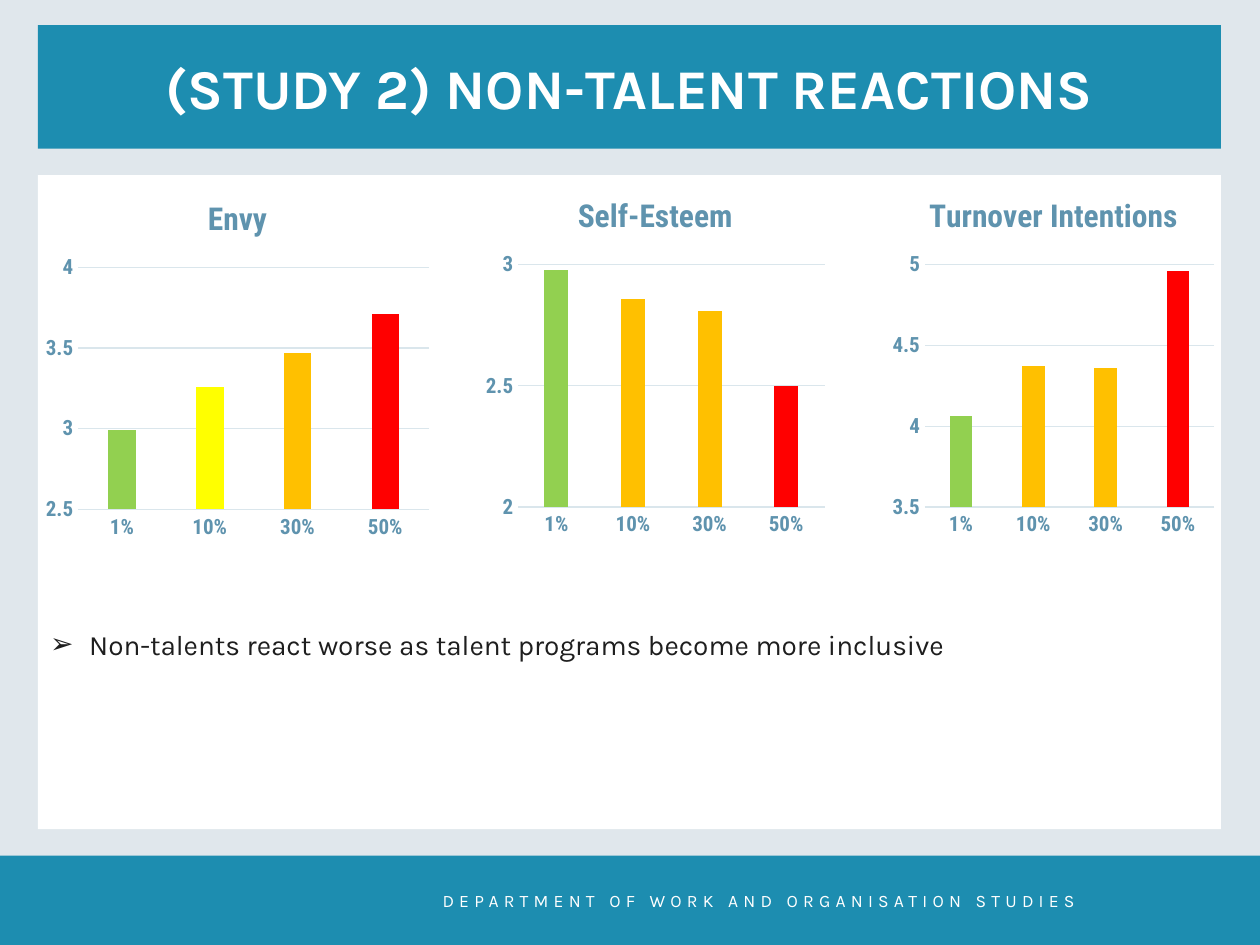
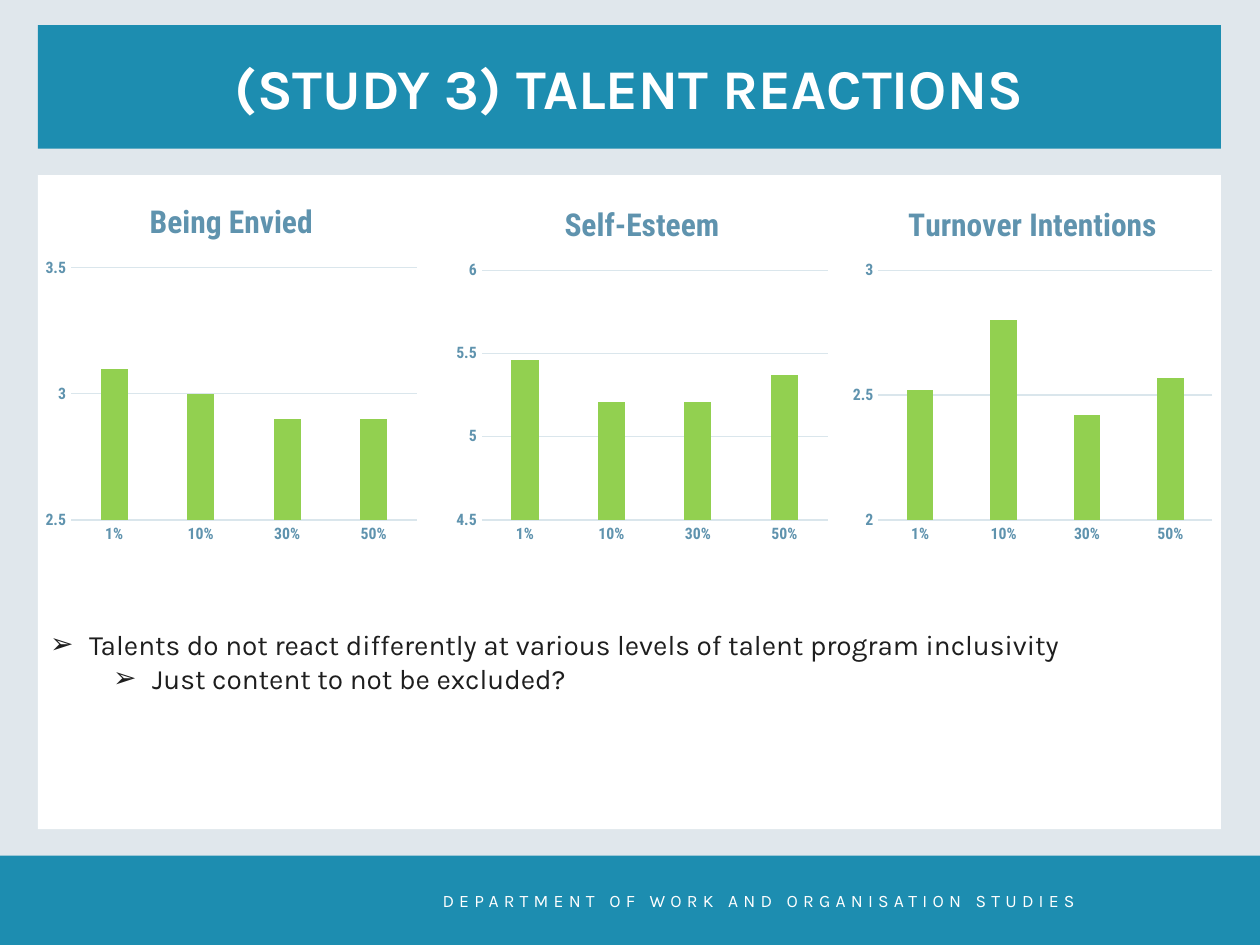
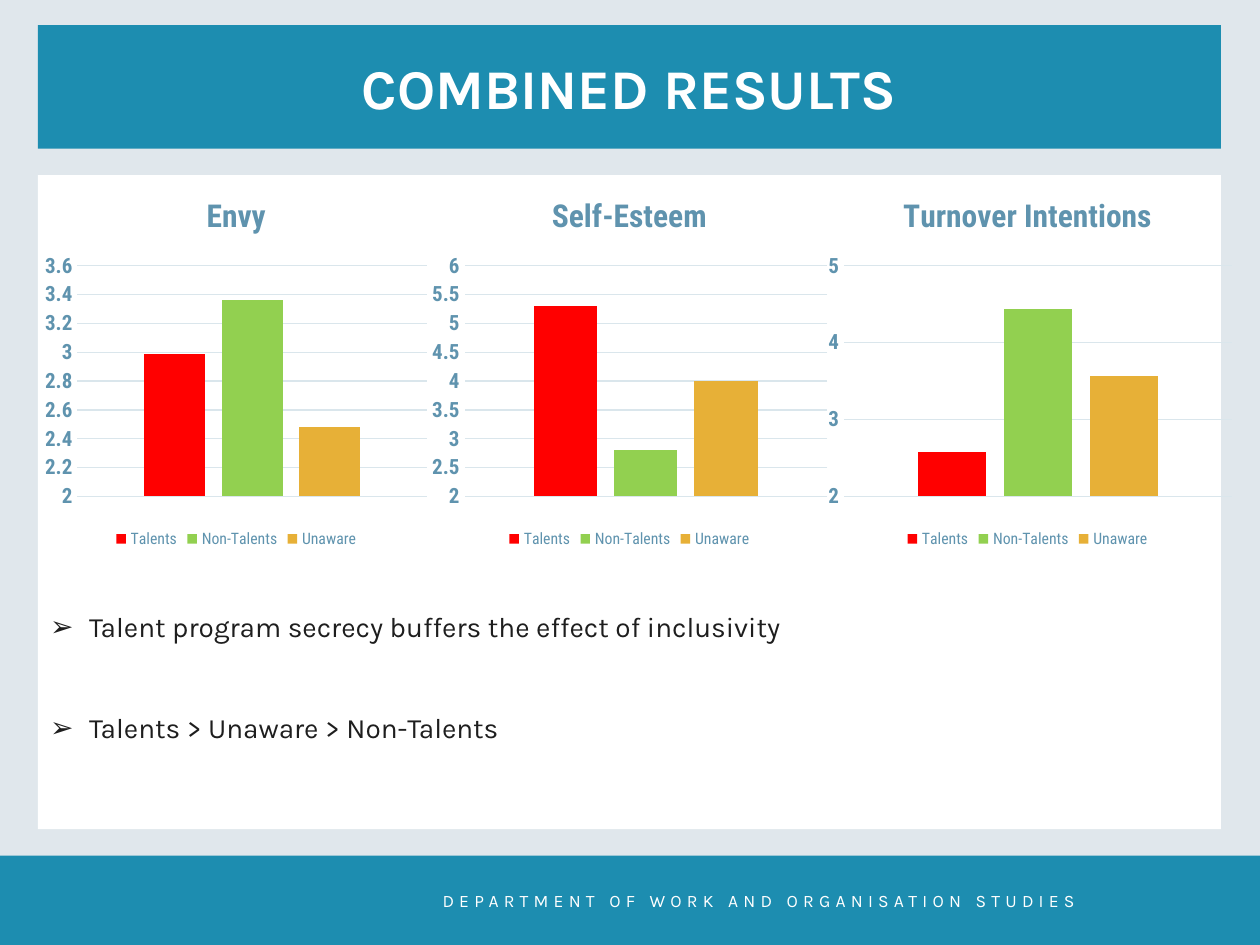
from lxml import etree
from pptx import Presentation
from pptx.chart.data import CategoryChartData
from pptx.dml.color import RGBColor
from pptx.enum.chart import XL_CHART_TYPE as CHART, XL_LEGEND_POSITION as LEGEND, XL_TICK_MARK as TICK
from pptx.enum.shapes import MSO_SHAPE as SHAPE
from pptx.enum.text import MSO_ANCHOR as ANCHOR, MSO_AUTO_SIZE as AUTO, PP_ALIGN as ALIGN
from pptx.oxml.ns import qn
from pptx.util import Inches, Pt

BACKDROP, TEAL, WHITE, INK = "E0E7EC", "1D8DB0", "FFFFFF", "1E1E1E"
STEEL, SLATE, GRID = "5F93AE", "2F4D5D", "DAE6EC"
GREEN, YELLOW, AMBER, RED, GOLD = "92D050", "FFFF00", "FFC000", "FF0000", "E7B037"
BODY_FONT, CHART_FONT = "Karla", "Roboto Condensed"
LEFT, WIDTH = 0.3, 9.39
INDENT = 0.31
SHARES = (0.01, 0.1, 0.3, 0.5)
GROUPS = (("Talents", RED), ("Non-Talents", GREEN), ("Unaware", GOLD))
FOOTER = "DEPARTMENT OF WORK AND ORGANISATION STUDIES"


def rgb(hex_colour):
    return RGBColor.from_string(hex_colour)


def paint(fill, colour):
    fill.solid()
    fill.fore_color.rgb = rgb(colour)


def style_font(font, size, colour, bold=False, name=CHART_FONT):
    font.size, font.bold, font.name = Pt(size), bold, name
    font.color.rgb = rgb(colour)


def write(p, text, size=16, colour=INK, bold=False, name=BODY_FONT, align=ALIGN.LEFT, spacing=0):
    p.alignment = align
    r = p.add_run()
    r.text = text
    style_font(r.font, size, colour, bold, name)
    if spacing:
        r.font._element.set("spc", str(spacing * 100))


def add_rect(slide, left, top, width, height, colour):
    sp = slide.shapes.add_shape(SHAPE.RECTANGLE, Inches(left), Inches(top), Inches(width), Inches(height))
    sp.shadow.inherit = False
    paint(sp.fill, colour)
    sp.line.fill.background()
    return sp


def add_title(slide, text):
    sp = slide.shapes.title
    sp.left, sp.top, sp.width, sp.height = (Inches(v) for v in (LEFT, 0.2, WIDTH, 0.98))
    paint(sp.fill, TEAL)
    tf = sp.text_frame
    tf.auto_size, tf.vertical_anchor = AUTO.NONE, ANCHOR.MIDDLE
    write(tf.paragraphs[0], text, size=32, colour=WHITE, bold=True, align=ALIGN.CENTER)


def add_footer(slide):
    add_rect(slide, 0, 6.79, 10, 0.71, TEAL)
    tf = slide.shapes.add_textbox(Inches(1.91), Inches(6.79), Inches(6.82), Inches(0.71)).text_frame
    tf.word_wrap, tf.vertical_anchor = True, ANCHOR.MIDDLE
    tf.margin_left = tf.margin_top = tf.margin_bottom = 0
    tf.margin_right = Inches(0.2)
    write(tf.paragraphs[0], FOOTER, size=10, colour=WHITE, align=ALIGN.RIGHT, spacing=3)


def add_bullets(slide, items, offset, gap=0):
    """Body panel with (level, text) items starting offset inches below its top."""
    tf = add_rect(slide, LEFT, 2.84, WIDTH, 3.74, WHITE).text_frame
    tf.word_wrap, tf.vertical_anchor = True, ANCHOR.TOP
    tf.margin_top = Inches(offset)
    for i, (level, text) in enumerate(items):
        p = tf.add_paragraph() if i else tf.paragraphs[0]
        p.level = level
        if i and gap:
            p.space_before = Pt(gap)
        pPr = p._p.get_or_add_pPr()
        pPr.set("marL", str(Inches(INDENT + 0.5 * level)))
        pPr.set("indent", str(-Inches(INDENT)))
        etree.SubElement(pPr, qn("a:buFont")).set("typeface", "Arial")
        etree.SubElement(pPr, qn("a:buChar")).set("char", "➢")
        write(p, text)


def place_plot(chart, box):
    """Fix the inner plot area at box: x, y, width, height as shares of the chart."""
    area = chart._chartSpace.chart.plotArea
    layout = area.find(qn("c:layout"))
    if layout is None:
        layout = etree.Element(qn("c:layout"))
        area.insert(0, layout)
    manual = etree.SubElement(layout, qn("c:manualLayout"))
    settings = [("layoutTarget", "inner"), ("xMode", "edge"), ("yMode", "edge"), *zip("xywh", box)]
    for tag, value in settings:
        etree.SubElement(manual, qn("c:" + tag)).set("val", str(value))


def style_value_axis(axis, scale, size):
    axis.minimum_scale, axis.maximum_scale, axis.major_unit = scale
    axis.major_tick_mark = axis.minor_tick_mark = TICK.NONE
    axis.format.line.fill.background()
    grid = axis.major_gridlines.format.line
    grid.width, grid.color.rgb = Pt(0.75), rgb(GRID)
    style_font(axis.tick_labels.font, size, STEEL, True)


def add_columns(slide, box, title, data, scale, size):
    gf = slide.shapes.add_chart(CHART.COLUMN_CLUSTERED, *(Inches(v) for v in box), data)
    chart = gf.chart
    style_font(chart.font, 10, SLATE)
    chart.has_title, chart.has_legend = True, False
    write(chart.chart_title.text_frame.paragraphs[0], title, size=18, colour=STEEL, bold=True,
          name=CHART_FONT, align=ALIGN.CENTER)
    plot = chart.plots[0]
    plot.gap_width, plot.overlap, plot.vary_by_categories = 219, -27, False
    style_value_axis(chart.value_axis, scale, size)
    return chart


def add_share_chart(slide, box, title, values, scale, size, colours, series_name):
    """One column for each share of employees in the talent program."""
    data = CategoryChartData()
    data.categories = SHARES
    data.categories.number_format = "0%"
    data.add_series(series_name, values)
    chart = add_columns(slide, box, title, data, scale, size)
    axis = chart.category_axis
    axis.major_tick_mark = axis.minor_tick_mark = TICK.NONE
    axis.format.line.width, axis.format.line.color.rgb = Pt(0.75), rgb(GRID)
    labels = axis.tick_labels
    labels.number_format, labels.number_format_is_linked = "0%", False
    style_font(labels.font, size, STEEL, True)
    series = chart.series[0]
    paint(series.format.fill, colours[0])
    if len(set(colours)) > 1:
        for i, colour in enumerate(colours):
            paint(series.points[i].format.fill, colour)


def add_group_chart(slide, box, title, values, scale, plot_box):
    """One column and legend entry for each employee group."""
    data = CategoryChartData()
    data.categories = ["1"]
    for (name, _), value in zip(GROUPS, values):
        data.add_series(name, [value])
    chart = add_columns(slide, box, title, data, scale, 12)
    chart.category_axis.visible = False
    for series, (_, colour) in zip(chart.series, GROUPS):
        paint(series.format.fill, colour)
    chart.has_legend = True
    chart.legend.position, chart.legend.include_in_layout = LEGEND.BOTTOM, False
    style_font(chart.legend.font, 9, STEEL)
    place_plot(chart, plot_box)


def add_slide(prs, title, items, offset, gap=0):
    slide = prs.slides.add_slide(prs.slide_layouts[5])
    paint(slide.background.fill, BACKDROP)
    add_footer(slide)
    add_title(slide, title)
    add_rect(slide, LEFT, 1.39, WIDTH, 1.45, WHITE)
    add_bullets(slide, items, offset, gap)
    return slide


def main():
    prs = Presentation()
    prs.slide_width, prs.slide_height = Inches(10), Inches(7.5)

    slide = add_slide(prs, "(STUDY 2) NON-TALENT REACTIONS",
                      [(0, "Non-talents react worse as talent programs become more inclusive")], 2.14)
    for box, title, values, scale, second in (
        ((0.3, 1.41, 3.17, 2.93), "Envy", (2.99, 3.26, 3.47, 3.71), (2.5, 4, 0.5), YELLOW),
        ((3.8, 1.39, 2.8, 2.93), "Self-Esteem", (2.98, 2.86, 2.81, 2.5), (2, 3, 0.5), AMBER),
        ((7.03, 1.39, 2.66, 2.93), "Turnover Intentions", (4.06, 4.37, 4.36, 4.96), (3.5, 5, 0.5), AMBER),
    ):
        add_share_chart(slide, box, title, values, scale, 12, (GREEN, second, AMBER, RED), title)

    slide = add_slide(prs, "(STUDY 3) TALENT REACTIONS",
                      [(0, "Talents do not react differently at various levels of talent program inclusivity"),
                       (1, "Just content to not be excluded?")], 2.14)
    for box, title, values, scale in (
        ((0.3, 1.44, 3.07, 2.93), "Being Envied", (3.1, 3, 2.9, 2.9), (2.5, 3.5, 0.5)),
        ((3.56, 1.46, 3.07, 2.91), "Self-Esteem", (5.46, 5.21, 5.21, 5.37), (4.5, 6, 0.5)),
        ((6.71, 1.46, 2.97, 2.91), "Turnover Intentions", (2.52, 2.8, 2.42, 2.57), (2, 3, 0.5)),
    ):
        add_share_chart(slide, box, title, values, scale, 9, (GREEN,), "Series 1")

    slide = add_slide(prs, "COMBINED RESULTS",
                      [(0, "Talent program secrecy buffers the effect of inclusivity"),
                       (0, "Talents > Unaware > Non-Talents")], 2, gap=38.5)
    for left, width, title, values, scale, plot_x, plot_w in (
        (0.3, 3.15, "Envy", (2.99, 3.36, 2.48), (2, 3.6, 0.2), 0.1, 0.88),
        (3.36, 3.27, "Self-Esteem", (5.3, 2.8, 4), (2, 6, 0.5), 0.1, 0.88),
        (6.5, 3.31, "Turnover Intentions", (2.58, 4.44, 3.56), (2, 5, 1), 0.06, 0.93),
    ):
        add_group_chart(slide, (left, 1.39, width, 3), title, values, scale, (plot_x, 0.24, plot_w, 0.61))

    prs.save("out.pptx")


if __name__ == "__main__":
    main()
